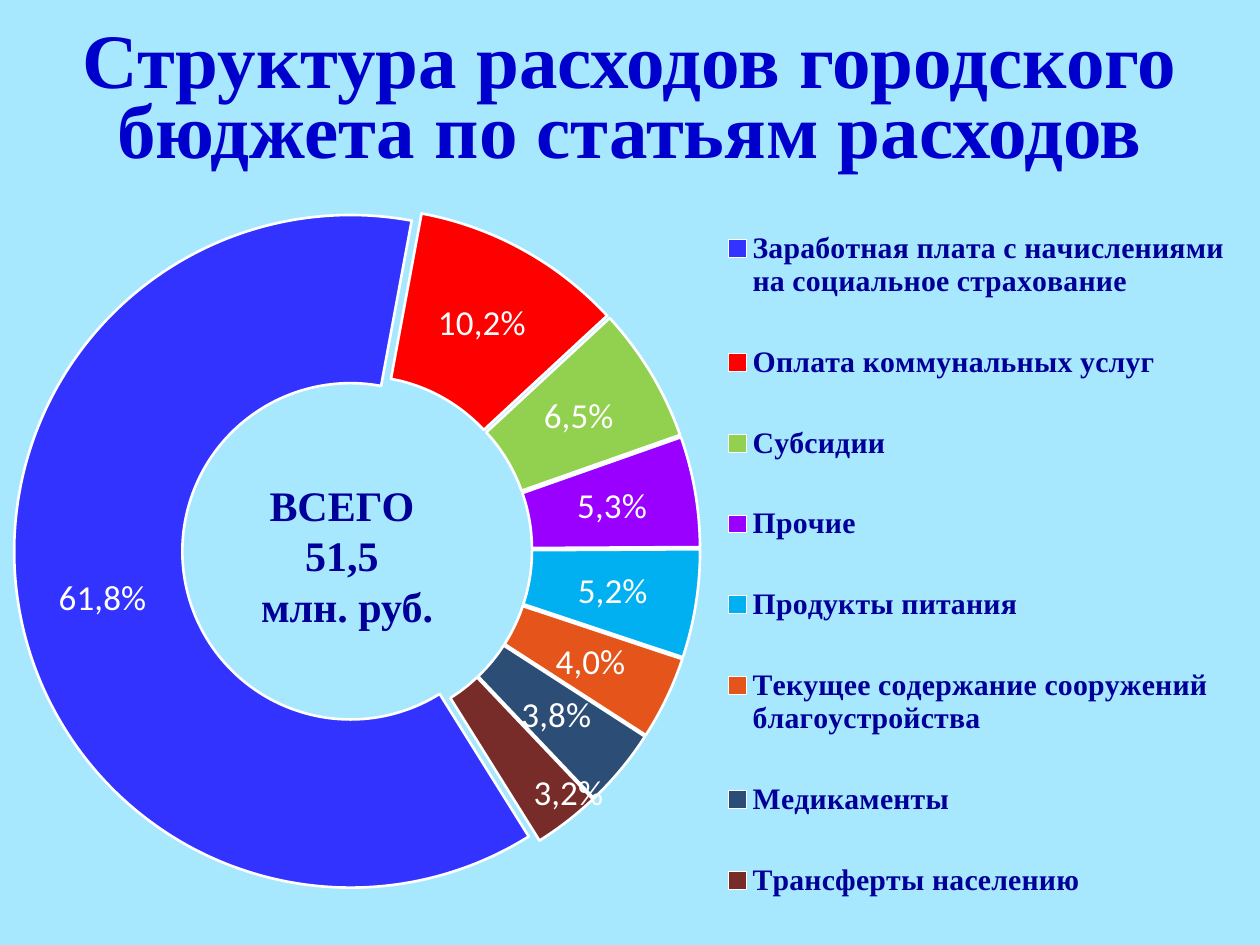
from lxml import etree
from pptx import Presentation
from pptx.chart.data import CategoryChartData
from pptx.dml.color import RGBColor
from pptx.enum.chart import XL_CHART_TYPE, XL_LEGEND_POSITION
from pptx.enum.text import MSO_ANCHOR, PP_ALIGN
from pptx.oxml.ns import qn
from pptx.util import Inches, Pt

DOUGHNUT = XL_CHART_TYPE.DOUGHNUT
LEGEND_RIGHT = XL_LEGEND_POSITION.RIGHT
MIDDLE = MSO_ANCHOR.MIDDLE
CENTER = PP_ALIGN.CENTER

EXPENSES = [
    ("Заработная плата с начислениями на социальное страхование", 0.618, "3333FF"),
    ("Оплата коммунальных услуг", 0.102, "FF0000"),
    ("Субсидии", 0.065, "92D050"),
    ("Прочие", 0.053, "9900FF"),
    ("Продукты питания", 0.052, "00B0F0"),
    ("Текущее содержание сооружений благоустройства", 0.04, "E5551B"),
    ("Медикаменты", 0.038, "2C4D75"),
    ("Трансферты населению", 0.032, "772C2A"),
]


def color(value):
    return RGBColor.from_string(value)


def set_layout(parent, position, before, **values):
    for old in parent.findall(qn("c:layout")):
        parent.remove(old)
    layout = etree.Element(qn("c:layout"))
    manual = etree.SubElement(layout, qn("c:manualLayout"))
    for tag, value in values.items():
        etree.SubElement(manual, qn("c:" + tag)).set("val", str(value))
    if before:
        parent.insert(position, layout)
    else:
        parent[position].addnext(layout)


class SlideBuilder:
    serif = "Times New Roman"
    sans = "Calibri"
    background = "A7E8FF"
    title_color = "0000CC"
    text_color = "000099"
    white = "FFFFFF"
    percent = "0.0%"

    def __init__(self, presentation):
        self.width = presentation.slide_width
        self.height = presentation.slide_height
        self.slide = presentation.slides.add_slide(presentation.slide_layouts[6])
        fill = self.slide.background.fill
        fill.solid()
        fill.fore_color.rgb = color(self.background)

    def box(self, left, top, width, height):
        return (round(left * self.width), round(top * self.height),
                round(width * self.width), round(height * self.height))

    def style(self, font, size, hex_color, bold=True, name=None):
        font.name = name or self.serif
        font.size = Pt(size)
        font.bold = bold
        font.color.rgb = color(hex_color)

    def text(self, area, lines, size, hex_color, spacing=None):
        frame = self.slide.shapes.add_textbox(*self.box(*area)).text_frame
        frame.word_wrap = True
        frame.vertical_anchor = MIDDLE
        for index, line in enumerate(lines):
            paragraph = frame.paragraphs[0] if index == 0 else frame.add_paragraph()
            paragraph.alignment = CENTER
            if spacing:
                paragraph.line_spacing = Pt(spacing)
            run = paragraph.add_run()
            run.text = line
            self.style(run.font, size, hex_color)

    def doughnut(self, area, rows, hole, start, explosion):
        data = CategoryChartData(number_format=self.percent)
        data.categories = [name for name, share, fill in rows]
        data.add_series("Series 1", [share for name, share, fill in rows])
        chart = self.slide.shapes.add_chart(DOUGHNUT, *self.box(*area), data).chart
        chart.has_title = False
        chart.font.name = self.sans
        chart.font.size = Pt(10)
        chart.font.color.rgb = color("000000")
        plot = chart.plots[0]
        plot.vary_by_categories = True
        series = plot.series[0]
        labels = series.data_labels
        labels.show_value = True
        labels.show_percentage = False
        labels.number_format = self.percent
        labels.number_format_is_linked = False
        self.style(labels.font, 20, self.white, True, self.sans)
        for index, (name, share, fill) in enumerate(rows):
            self.slice(series.points[index], share, fill)
        self.ring(chart, series, hole, start, explosion)
        self.legend(chart)
        return series

    def slice(self, point, share, fill):
        point.format.fill.solid()
        point.format.fill.fore_color.rgb = color(fill)
        point.format.line.color.rgb = color(self.white)
        point.format.line.width = Pt(1.5)
        run = point.data_label.text_frame.paragraphs[0].add_run()
        run.text = f"{share:.1%}".replace(".", ",")
        self.style(run.font, 20, self.white, False, self.sans)

    def ring(self, chart, series, hole, start, explosion):
        element = etree.Element(qn("c:explosion"))
        element.set("val", str(explosion))
        series._element.find(qn("c:dPt")).addprevious(element)
        doughnut = chart.plots[0]._element
        for tag, value in (("c:firstSliceAng", start), ("c:holeSize", hole)):
            setting = doughnut.find(qn(tag))
            if setting is None:
                setting = etree.SubElement(doughnut, qn(tag))
            setting.set("val", str(value))
        plot_area = chart._chartSpace.chart.plotArea
        set_layout(plot_area, 0, True, layoutTarget="inner", xMode="edge", yMode="edge",
                   x=0.011, y=0.03, w=0.545, h=0.902)

    def legend(self, chart):
        chart.has_legend = True
        legend = chart.legend
        legend.position = LEGEND_RIGHT
        legend.include_in_layout = False
        self.style(legend.font, 17, self.text_color)
        set_layout(legend._element, 0, False, xMode="edge", yMode="edge",
                   x=0.57, y=0, w=0.41, h=1)

    def move_label(self, series, index, right, down):
        label = series.points[index].data_label._get_or_add_dLbl()
        set_layout(label, 0, False, x=right, y=down)


def main():
    presentation = Presentation()
    presentation.slide_width = Inches(10)
    presentation.slide_height = Inches(7.5)
    builder = SlideBuilder(presentation)
    builder.text((0.05, 0.02, 0.9, 0.18),
                 ["Структура расходов городского бюджета по статьям расходов"],
                 44, builder.title_color, spacing=40)
    series = builder.doughnut((0, 0.195, 1, 0.805), EXPENSES,
                              hole=37, start=148, explosion=4)
    builder.move_label(series, len(EXPENSES) - 1, 0.042, 0.05)
    builder.text((0.185, 0.5, 0.181, 0.175), ["ВСЕГО ", "51,5 ", "млн. руб."],
                 24, builder.text_color)
    presentation.save("out.pptx")


if __name__ == "__main__":
    main()
